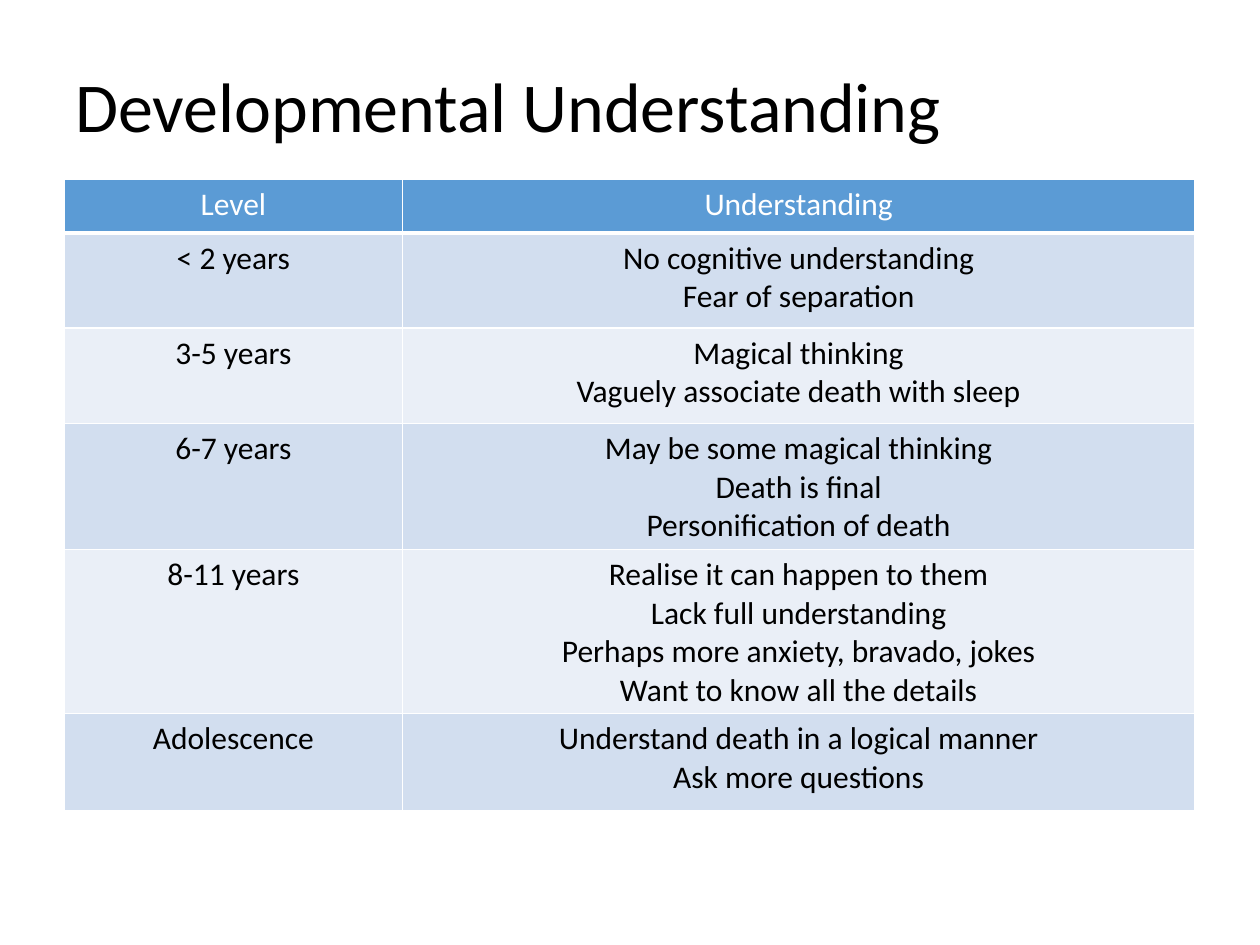
"""Build a slide that tabulates how children understand death at each age."""
from typing import Any, NamedTuple

from lxml.etree import SubElement
from pptx import Presentation
from pptx.dml.color import RGBColor
from pptx.enum.text import MSO_ANCHOR, PP_ALIGN
from pptx.oxml.ns import qn
from pptx.util import Cm, Pt


class Stage(NamedTuple):
    level: str
    understanding: tuple[str, ...]
    height: float


HEADING = Stage("Level", ("Understanding",), 1.09)
STAGES = (
    Stage("< 2 years", ("No cognitive understanding", "Fear of separation"), 1.91),
    Stage("3-5 years", ("Magical thinking", "Vaguely associate death with sleep"), 1.93),
    Stage("6-7 years", ("May be some magical thinking", "Death is final",
                        "Personification of death"), 2.49),
    Stage("8-11 years", ("Realise it can happen to them", "Lack full understanding",
                         "Perhaps more anxiety, bravado, jokes",
                         "Want to know all the details"), 1.19),
    Stage("Adolescence", ("Understand death in a logical manner", "Ask more questions"), 1.96),
)
COLUMN_WIDTHS = (6.81, 15.98)
BLACK, WHITE, HEADING_FILL = "000000", "FFFFFF", "5B9BD5"
BAND_FILLS = ("D2DEEF", "EAEFF7")
TITLE_FORMAT = {"name": "Calibri", "size": Pt(40)}
CELL_FORMAT = {"name": "Calibri", "size": Pt(18), "bold": False}


def rgb(hex_colour: str) -> RGBColor:
    return RGBColor.from_string(hex_colour)


def set_font(paragraph: Any, values: dict[str, Any], colour: str) -> None:
    for attribute, value in values.items():
        setattr(paragraph.font, attribute, value)
    paragraph.font.color.rgb = rgb(colour)


def add_borders(cell: Any, bottom: int) -> None:
    properties = cell._tc.get_or_add_tcPr()
    for position, (side, width) in enumerate(zip("LRTB", (1, 1, 1, bottom))):
        border = SubElement(properties, qn(f"a:ln{side}"), w=str(Pt(width)))
        SubElement(SubElement(border, qn("a:solidFill")), qn("a:srgbClr"), val=WHITE)
        properties.insert(position, border)


def fill_cell(cell: Any, lines: tuple[str, ...], fill: str, colour: str, bottom: int) -> None:
    cell.text = "\n".join(lines)
    for paragraph in cell.text_frame.paragraphs:
        paragraph.alignment = PP_ALIGN.CENTER
        set_font(paragraph, CELL_FORMAT, colour)
    cell.fill.solid()
    cell.fill.fore_color.rgb = rgb(fill)
    add_borders(cell, bottom)


def add_title(slide: Any, wording: str) -> None:
    title = slide.shapes.add_textbox(Cm(1.27), Cm(0.84), Cm(22.86), Cm(2.74)).text_frame
    title.word_wrap = True
    title.vertical_anchor = MSO_ANCHOR.MIDDLE
    title.text = wording
    title.paragraphs[0].line_spacing = 0.9
    set_font(title.paragraphs[0], TITLE_FORMAT, BLACK)


def add_stages(slide: Any) -> None:
    rows = (HEADING, *STAGES)
    table = slide.shapes.add_table(
        len(rows), len(COLUMN_WIDTHS), Cm(1.3), Cm(3.61),
        Cm(sum(COLUMN_WIDTHS)), Cm(sum(stage.height for stage in rows))).table
    for column, width in zip(table.columns, COLUMN_WIDTHS):
        column.width = Cm(width)
    for index, (row, stage) in enumerate(zip(table.rows, rows)):
        row.height = Cm(stage.height)
        if stage is HEADING:
            style = (HEADING_FILL, WHITE, 3)
        else:
            style = (BAND_FILLS[(index - 1) % 2], BLACK, 1)
        for cell, lines in zip(row.cells, ((stage.level,), stage.understanding)):
            fill_cell(cell, lines, *style)


def main() -> None:
    presentation = Presentation()
    presentation.slide_width, presentation.slide_height = Cm(25.4), Cm(19.05)
    slide = presentation.slides.add_slide(presentation.slide_layouts[6])
    add_title(slide, "Developmental Understanding")
    add_stages(slide)
    presentation.save("out.pptx")


if __name__ == "__main__":
    main()
